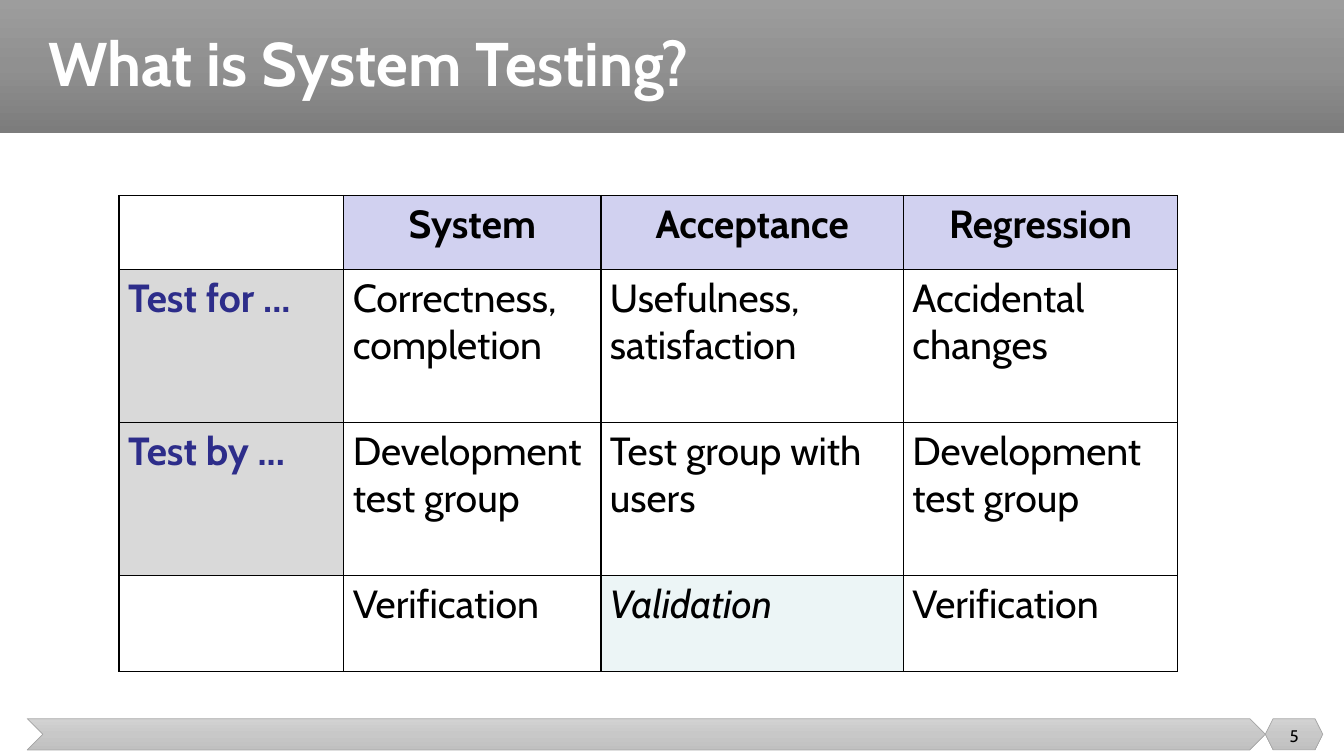
from copy import deepcopy

from lxml import etree
from pptx import Presentation, util as u
from pptx.dml.color import RGBColor
from pptx.enum import shapes, text
from pptx.oxml import ns

# Page and palette
WIDTH, HEIGHT = u.Inches(13.33), u.Inches(7.5)
FONT = "Cabin"
BLACK = RGBColor(0x00, 0x00, 0x00)
WHITE = RGBColor(0xFF, 0xFF, 0xFF)
INDIGO = RGBColor(0x2D, 0x2D, 0x8A)
LAVENDER = RGBColor(0xD1, 0xD1, 0xF0)
LIGHT_GREY = RGBColor(0xD9, 0xD9, 0xD9)
PALE_TEAL = RGBColor(0xDA, 0xED, 0xEF)
OUTLINE_GREY = RGBColor(0xA5, 0xA5, 0xA5)
BAND_SHADES = [RGBColor(v, v, v) for v in (0x9D, 0x90, 0x7C)]
FOOTER_SHADES = [RGBColor(v, v, v) for v in (0xD2, 0xC8, 0xC0)]

# Layout in inches
BAND_HEIGHT = 1.32
FOOTER_TOP, FOOTER_HEIGHT = 7.13, 0.31
NUMBER_LEFT, NUMBER_WIDTH = 12.55, 0.57
TABLE_LEFT, TABLE_TOP = 1.18, 1.94
COLUMNS = [2.23, 2.55, 3, 2.72]
ROWS = [0.73, 1.52, 1.52, 0.95]

COMPARISON = [
    ["", "System", "Acceptance", "Regression"],
    ["Test for ...", "Correctness, completion", "Usefulness, satisfaction", "Accidental changes"],
    ["Test by ...", "Development test group", "Test group with users", "Development test group"],
    ["", "Verification", "Validation", "Verification"],
]

# Text and cell formats
BODY = {"name": FONT, "size": u.Pt(28), "bold": False, "italic": False}
HEADING = {**BODY, "bold": True}
EMPHASIS = {**BODY, "italic": True}
TITLE = {**HEADING, "size": u.Pt(44)}
PAGE_NUMBER = {**BODY, "size": u.Pt(12)}
CELL_MARGINS = {"margin_left": u.Inches(0.09), "margin_right": u.Inches(0.09),
                "margin_top": u.Inches(0.05), "margin_bottom": u.Inches(0.05)}


def apply(target, values):
    for name, value in values.items():
        setattr(target, name, value)


def write(paragraph, words, style, color, align=text.PP_ALIGN.LEFT):
    paragraph.alignment = align
    run = paragraph.add_run()
    run.text = words
    apply(run.font, style)
    run.font.color.rgb = color


def shade(fill, colors):
    """Vertical gradient with evenly spaced stops."""
    fill.gradient()
    fill.gradient_angle = 270
    first = fill.gradient_stops[0]._gs
    stop_list = first.getparent()
    while len(stop_list) < len(colors):
        stop_list.append(deepcopy(first))
    for index, (stop, color) in enumerate(zip(fill.gradient_stops, colors)):
        stop.position = index / (len(colors) - 1)
        stop.color.rgb = color


def add_bar(slide, kind, left, top, width, height, colors, outline=None):
    bar = slide.shapes.add_shape(kind, *map(u.Inches, (left, top, width, height)))
    bar.shadow.inherit = False
    shade(bar.fill, colors)
    if outline is None:
        bar.line.fill.background()
    else:
        bar.line.color.rgb = outline
        bar.line.width = u.Pt(0.5)


def add_title(slide, words):
    title = slide.shapes.title
    apply(title, {"left": u.Inches(0.38), "top": 0,
                  "width": u.Inches(12.74), "height": u.Inches(BAND_HEIGHT)})
    apply(title.text_frame, {"vertical_anchor": text.MSO_ANCHOR.MIDDLE, "word_wrap": True})
    heading = title.text_frame.paragraphs[0]
    heading.line_spacing = 0.9
    write(heading, words, TITLE, WHITE)
    slide.shapes._spTree.append(title._element)  # in front of the band


def add_page_number(slide, number):
    box = slide.shapes.add_textbox(*map(u.Inches, (NUMBER_LEFT, 7.1, NUMBER_WIDTH, 0.4)))
    apply(box.text_frame, {"vertical_anchor": text.MSO_ANCHOR.MIDDLE, "word_wrap": True})
    write(box.text_frame.paragraphs[0], number, PAGE_NUMBER, BLACK, text.PP_ALIGN.CENTER)


def add_borders(cell):
    properties = cell._tc.get_or_add_tcPr()
    for index, side in enumerate(("lnL", "lnR", "lnT", "lnB")):
        border = etree.Element(ns.qn(f"a:{side}"), w=str(u.Pt(1)))
        solid = etree.SubElement(border, ns.qn("a:solidFill"))
        etree.SubElement(solid, ns.qn("a:srgbClr"), val=str(BLACK))
        properties.insert(index, border)


def fill_cell(cell, color, opacity=100):
    if color is None:
        cell.fill.background()
        return
    cell.fill.solid()
    cell.fill.fore_color.rgb = color
    if opacity < 100:
        tint = cell._tc.tcPr.find(f".//{ns.qn('a:srgbClr')}")
        etree.SubElement(tint, ns.qn("a:alpha"), val=str(opacity * 1000))


def cell_look(row, column, words):
    """Style, text colour, alignment, fill and opacity by role in the table."""
    if words and row == 0:
        return HEADING, BLACK, text.PP_ALIGN.CENTER, LAVENDER, 100
    if words and column == 0:
        return HEADING, INDIGO, text.PP_ALIGN.LEFT, LIGHT_GREY, 100
    if words == "Validation":
        return EMPHASIS, BLACK, text.PP_ALIGN.LEFT, PALE_TEAL, 51
    return BODY, BLACK, text.PP_ALIGN.LEFT, None, 100


def add_comparison(slide):
    frame = slide.shapes.add_table(
        len(ROWS), len(COLUMNS),
        *map(u.Inches, (TABLE_LEFT, TABLE_TOP, sum(COLUMNS), sum(ROWS))))
    table = frame.table
    apply(table, {"first_row": False, "horz_banding": False})
    for column, width in zip(table.columns, COLUMNS):
        column.width = u.Inches(width)
    for row, height in zip(table.rows, ROWS):
        row.height = u.Inches(height)
    for r, entries in enumerate(COMPARISON):
        for c, words in enumerate(entries):
            cell = table.cell(r, c)
            style, color, align, fill, opacity = cell_look(r, c, words)
            apply(cell, CELL_MARGINS)
            fill_cell(cell, fill, opacity)
            add_borders(cell)
            if words:
                write(cell.text_frame.paragraphs[0], words, style, color, align)


def main():
    deck = Presentation()
    apply(deck, {"slide_width": WIDTH, "slide_height": HEIGHT})
    slide = deck.slides.add_slide(deck.slide_layouts.get_by_name("Title Only"))

    # Header band and footer arrows
    preset = shapes.MSO_SHAPE
    add_bar(slide, preset.RECTANGLE, 0, 0, WIDTH.inches, BAND_HEIGHT, BAND_SHADES)
    add_bar(slide, preset.CHEVRON, 0.27, FOOTER_TOP, NUMBER_LEFT - 0.27, FOOTER_HEIGHT,
            FOOTER_SHADES, OUTLINE_GREY)
    add_bar(slide, preset.HEXAGON, NUMBER_LEFT, FOOTER_TOP, NUMBER_WIDTH, FOOTER_HEIGHT,
            FOOTER_SHADES, OUTLINE_GREY)

    # Content
    add_title(slide, "What is System Testing?")
    add_comparison(slide)
    add_page_number(slide, "5")
    deck.save("out.pptx")


if __name__ == "__main__":
    main()
